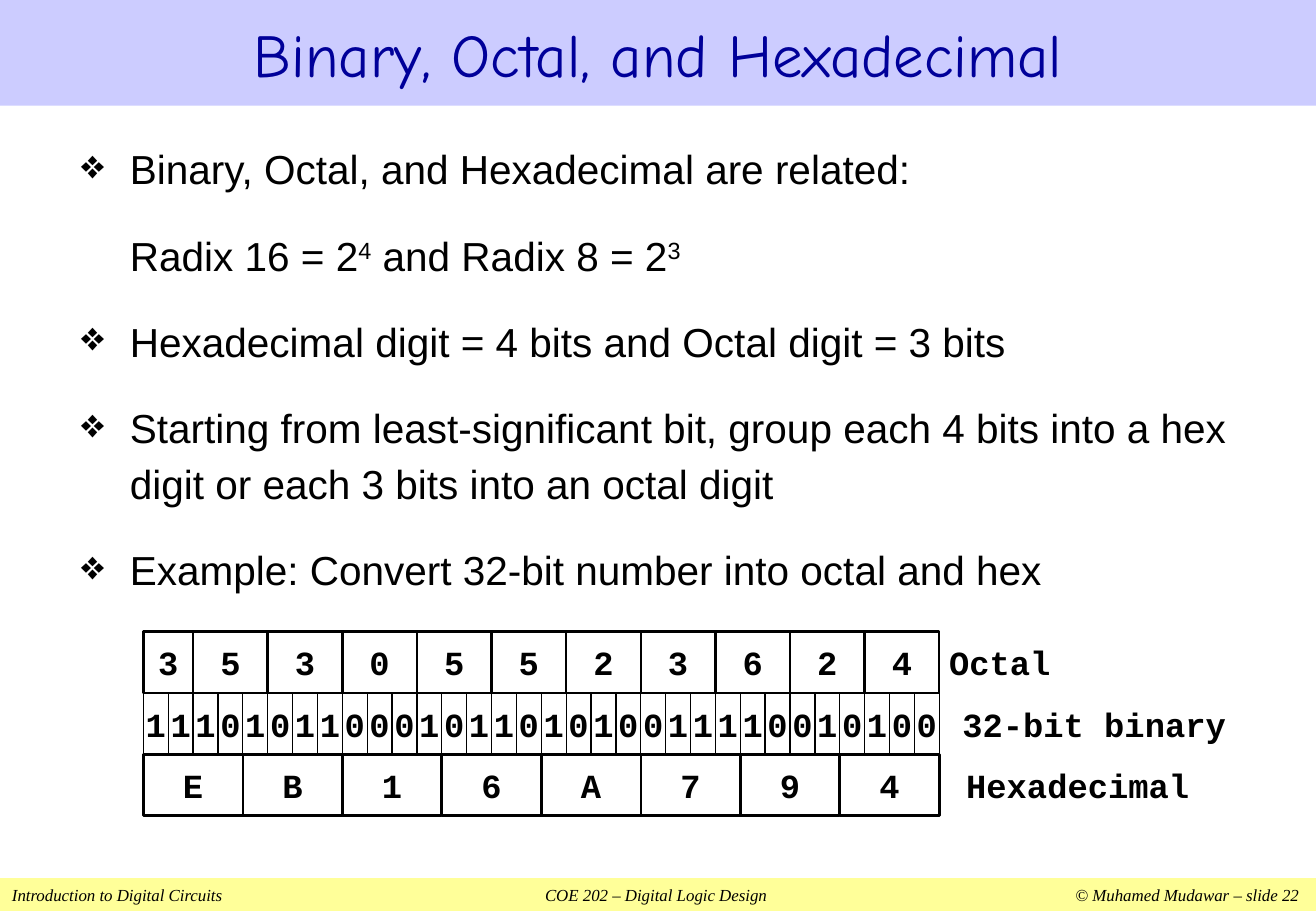
from lxml import etree
from pptx import Presentation, util as u
from pptx.dml.color import RGBColor
from pptx.enum import shapes, text
from pptx.oxml.ns import qn

WIDTH, HEIGHT = 10.83, 7.5
TITLE = "Binary, Octal, and Hexadecimal"
FOOTER = "Introduction to Digital Circuits\tCOE 202 – Digital Logic Design\t© Muhamed Mudawar – slide 22"
FOOTER_TABS = [(5.3, "ctr"), (10.59, "r")]
BULLETS = [
    ("❖", ["Binary, Octal, and Hexadecimal are related:"]),
    (None, ["Radix 16 = 2", "4", " and Radix 8 = 2", "3"]),
    ("❖", ["Hexadecimal digit = 4 bits and Octal digit = 3 bits"]),
    ("❖", ["Starting from least-significant bit, group each 4 bits into a hex digit "
           "or each 3 bits into an octal digit"]),
    ("❖", ["Example: Convert 32-bit number into octal and hex"]),
]
LEFT, CENTER = text.PP_ALIGN.LEFT, text.PP_ALIGN.CENTER
DIGIT_ROWS = [
    (2, "EB16A794", 4, 1.5, "Hexadecimal", 2.12, CENTER),
    (1, "11101011000101101010011110010100", 1, 0.75, "32-bit binary", 2.39, CENTER),
    (0, "35305523624", 3, 1.5, "Octal", 2.12, LEFT),
]
BITS = 32
GRID_LEFT, GRID_TOP, GRID_WIDTH, ROW = 1.18, 5.2, 6.55, 0.505
LABEL_LEFT = 7.81

TITLE_FONT = {"name": "Comic Neue", "size": u.Pt(36), "color": "000099"}
BODY_FONT = {"name": "Arial", "size": u.Pt(24), "color": "000000"}
DIGIT_FONT = {"name": "Courier New", "size": u.Pt(20), "bold": True, "color": "000000"}
FOOTER_FONT = {"name": "Times New Roman", "size": u.Pt(10), "italic": True, "color": "000000"}

deck = Presentation()
deck.slide_width, deck.slide_height = u.Inches(WIDTH), u.Inches(HEIGHT)
page = deck.slides.add_slide(deck.slide_layouts[6])


def color(value):
    return RGBColor.from_string(value)


def add_box(place, fill=None, line=None):
    box = page.shapes.add_shape(shapes.MSO_SHAPE.RECTANGLE, *map(u.Inches, place))
    box.shadow.inherit = False
    if fill:
        box.fill.solid()
        box.fill.fore_color.rgb = color(fill)
    else:
        box.fill.background()
    if line:
        box.line.color.rgb = color("000000")
        box.line.width = u.Pt(line)
    else:
        box.line.fill.background()
    return box


def add_label(place):
    return page.shapes.add_textbox(*map(u.Inches, place))


def set_frame(box, anchor, margins, wrap=True):
    frame = box.text_frame
    frame.word_wrap = wrap
    frame.vertical_anchor = anchor
    across, down = map(u.Inches, margins)
    frame.margin_left = frame.margin_right = across
    frame.margin_top = frame.margin_bottom = down
    return frame


def add_span(para, words, style):
    span = para.add_run()
    span.text = words
    for key, value in style.items():
        if key == "color":
            span.font.color.rgb = color(value)
        else:
            setattr(span.font, key, value)
    return span


def write_line(box, words, style, align, margins=(0, 0), wrap=True):
    para = set_frame(box, text.MSO_ANCHOR.MIDDLE, margins, wrap).paragraphs[0]
    para.alignment = align
    add_span(para, words, style)
    return para


def add_footer():
    box = add_box((0, 7.23, WIDTH, 0.27), fill="FFFF99")
    para = write_line(box, FOOTER, FOOTER_FONT, LEFT, (0.1, 0.05))
    stops = etree.SubElement(para._p.get_or_add_pPr(), qn("a:tabLst"))
    for position, align in FOOTER_TABS:
        etree.SubElement(stops, qn("a:tab"), pos=str(u.Inches(position)), algn=align)


def add_bullets():
    frame = set_frame(add_label((0.57, 0.98, 9.69, 3.97)), text.MSO_ANCHOR.TOP, (0.1, 0.15))
    for index, (bullet, parts) in enumerate(BULLETS):
        para = frame.add_paragraph() if index else frame.paragraphs[0]
        para.line_spacing = 1.15
        para.space_before = u.Pt(18)
        layout = para._p.get_or_add_pPr()
        layout.set("marL", str(u.Inches(0.4)))
        layout.set("indent", str(u.Inches(-0.4 if bullet else 0)))
        if bullet:
            etree.SubElement(layout, qn("a:buChar"), char=bullet)
        else:
            etree.SubElement(layout, qn("a:buNone"))
        for order, words in enumerate(parts):
            span = add_span(para, words, BODY_FONT)
            if order % 2:
                span._r.get_or_add_rPr().set("baseline", "30000")


def add_digits():
    bit = GRID_WIDTH / BITS
    for row, digits, size, line, label, width, align in DIGIT_ROWS:
        top = GRID_TOP + row * ROW
        for index, digit in enumerate(digits):
            end = BITS - size * (len(digits) - 1 - index)
            start = max(0, end - size)
            place = (GRID_LEFT + start * bit, top, (end - start) * bit, ROW)
            write_line(add_box(place, line=line), digit, DIGIT_FONT, CENTER, wrap=False)
        write_line(add_label((LABEL_LEFT, top, width, ROW)), label, DIGIT_FONT, align)


add_footer()
write_line(add_box((0, 0, WIDTH, 0.87), fill="CCCCFF"), TITLE, TITLE_FONT, CENTER, (0.1, 0.05))
add_bullets()
add_digits()
deck.save("out.pptx")
